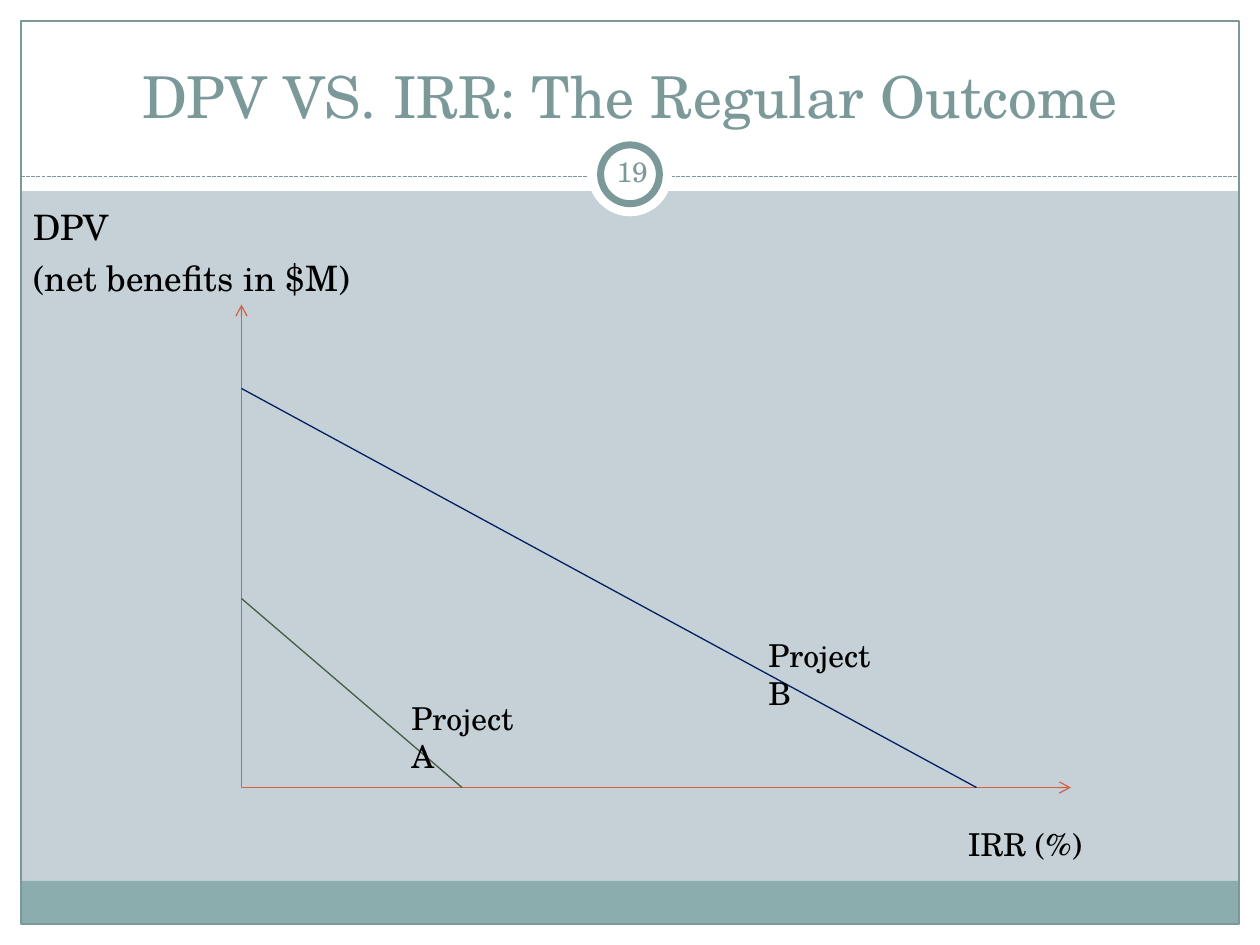
from lxml.etree import SubElement
from pptx import Presentation
from pptx.dml.color import RGBColor
from pptx.enum.dml import MSO_LINE
from pptx.enum.shapes import MSO_CONNECTOR, MSO_SHAPE
from pptx.enum.text import MSO_ANCHOR, PP_ALIGN
from pptx.oxml.ns import qn
from pptx.util import Emu, Pt

PX = 7620  # 120 px to the inch
WIDTH, HEIGHT, MARGIN = 1200, 900, 20
FONT = "TeX Gyre Schola"

WHITE = RGBColor(0xFF, 0xFF, 0xFF)
BLACK = RGBColor(0x00, 0x00, 0x00)
BACKGROUND = RGBColor(0xC5, 0xD1, 0xD7)
BAND = RGBColor(0x8C, 0xAD, 0xAE)
TEAL = RGBColor(0x7C, 0x99, 0x9A)
AXIS = RGBColor(0xD1, 0x63, 0x49)
NAVY = RGBColor(0x00, 0x20, 0x60)
GREEN = RGBColor(0x43, 0x5E, 0x40)


def px(*lengths):
    return [Emu(length * PX) for length in lengths]


def add_shape(slide, kind, box, fill=None, line=None, weight=0.75):
    shape = slide.shapes.add_shape(kind, *px(*box))
    shape.shadow.inherit = False
    if fill is None:
        shape.fill.background()
    else:
        shape.fill.solid()
        shape.fill.fore_color.rgb = fill
    if line is None:
        shape.line.fill.background()
    else:
        shape.line.color.rgb = line
        shape.line.width = Pt(weight)
    return shape


def add_line(slide, start, end, color, dash=None, arrow=False):
    connector = slide.shapes.add_connector(MSO_CONNECTOR.STRAIGHT, *px(*start, *end))
    connector.line.color.rgb = color
    connector.line.width = Pt(0.75)
    if dash is not None:
        connector.line.dash_style = dash
    if arrow:
        SubElement(connector.line._get_or_add_ln(), qn("a:tailEnd"), type="arrow")
    SubElement(connector._element.spPr, qn("a:effectLst"))
    return connector


def add_text(slide, text, box, size=18, color=BLACK, align=PP_ALIGN.LEFT,
             anchor=MSO_ANCHOR.TOP, wrap=True, inset=None, space_before=0):
    text_box = slide.shapes.add_textbox(*px(*box))
    frame = text_box.text_frame
    frame.word_wrap = wrap
    frame.vertical_anchor = anchor
    if inset is not None:
        frame.margin_left = frame.margin_right = Emu(inset * PX)
        frame.margin_top = frame.margin_bottom = Emu(inset * PX)
    frame.text = text
    for paragraph in frame.paragraphs:
        paragraph.alignment = align
        paragraph.space_before = Pt(space_before)
        paragraph.font.name = FONT
        paragraph.font.size = Pt(size)
        paragraph.font.color.rgb = color
    return text_box


def draw_frame(slide, box):
    left, top, width, height = box
    inner_width, inner_height = width - 2 * MARGIN, height - 2 * MARGIN
    right, bottom = left + width - MARGIN, top + height - MARGIN
    # White margins and header
    for margin in ((left, bottom, width, MARGIN), (left, top, width, 182),
                   (left, top, MARGIN, height), (right, top, MARGIN, height)):
        add_shape(slide, MSO_SHAPE.RECTANGLE, margin, fill=WHITE)
    # Footer band and outline
    add_shape(slide, MSO_SHAPE.RECTANGLE,
              (left + MARGIN, bottom - 41, inner_width, 41), fill=BAND)
    add_shape(slide, MSO_SHAPE.RECTANGLE,
              (left + MARGIN, top + MARGIN, inner_width, inner_height), line=TEAL)


def draw_header(slide, box, title, number):
    left, top, width, height = box
    middle, rule = left + width // 2, top + height
    add_line(slide, (left, rule), (left + width, rule), TEAL, dash=MSO_LINE.SQUARE_DOT)
    # Number badge
    add_shape(slide, MSO_SHAPE.OVAL, (middle - 40, rule - 42, 80, 80), fill=WHITE)
    add_shape(slide, MSO_SHAPE.OVAL, (middle - 28, rule - 30, 56, 56),
              fill=WHITE, line=TEAL, weight=4)
    add_text(slide, title, (left + 20, top + 10, width - 40, 100), size=33, color=TEAL,
             align=PP_ALIGN.CENTER, anchor=MSO_ANCHOR.BOTTOM)
    add_text(slide, number, (middle - 28, rule - 34, 60, 58), size=16, color=TEAL,
             align=PP_ALIGN.CENTER, anchor=MSO_ANCHOR.MIDDLE, inset=6)


def draw_graph(slide, box):
    left, top, width, height = box
    bottom = top + height
    origin = (left, bottom)
    # Axes
    add_line(slide, origin, (left, top), AXIS, arrow=True)
    add_line(slide, origin, (left + width, bottom), AXIS, arrow=True)
    add_text(slide, "DPV\n(net benefits in $M)", (left - 210, top - 100, 1135, 610),
             size=20, space_before=4.8)
    add_text(slide, "IRR (%)", (left + 680, bottom + 30, 133, 48), wrap=False)
    # Projects: label, intercepts on both axes, label offset above the origin
    for label, rise, run, label_x, label_y, color in (
            ("Project B", 380, 700, 490, 150, NAVY),
            ("Project A", 180, 210, 150, 90, GREEN)):
        add_line(slide, (left, bottom - rise), (left + run, bottom), color)
        add_text(slide, label, (left + label_x, bottom - label_y, 147, 48))


def main():
    presentation = Presentation()
    presentation.slide_width, presentation.slide_height = px(WIDTH, HEIGHT)
    slide = presentation.slides.add_slide(presentation.slide_layouts[6])
    slide.background.fill.solid()
    slide.background.fill.fore_color.rgb = BACKGROUND

    draw_frame(slide, (0, 0, WIDTH, HEIGHT))
    draw_header(slide, (MARGIN, MARGIN, WIDTH - 2 * MARGIN, 148),
                "DPV VS. IRR: The Regular Outcome", "19")
    draw_graph(slide, (230, 290, 790, 460))
    presentation.save("out.pptx")


if __name__ == "__main__":
    main()
